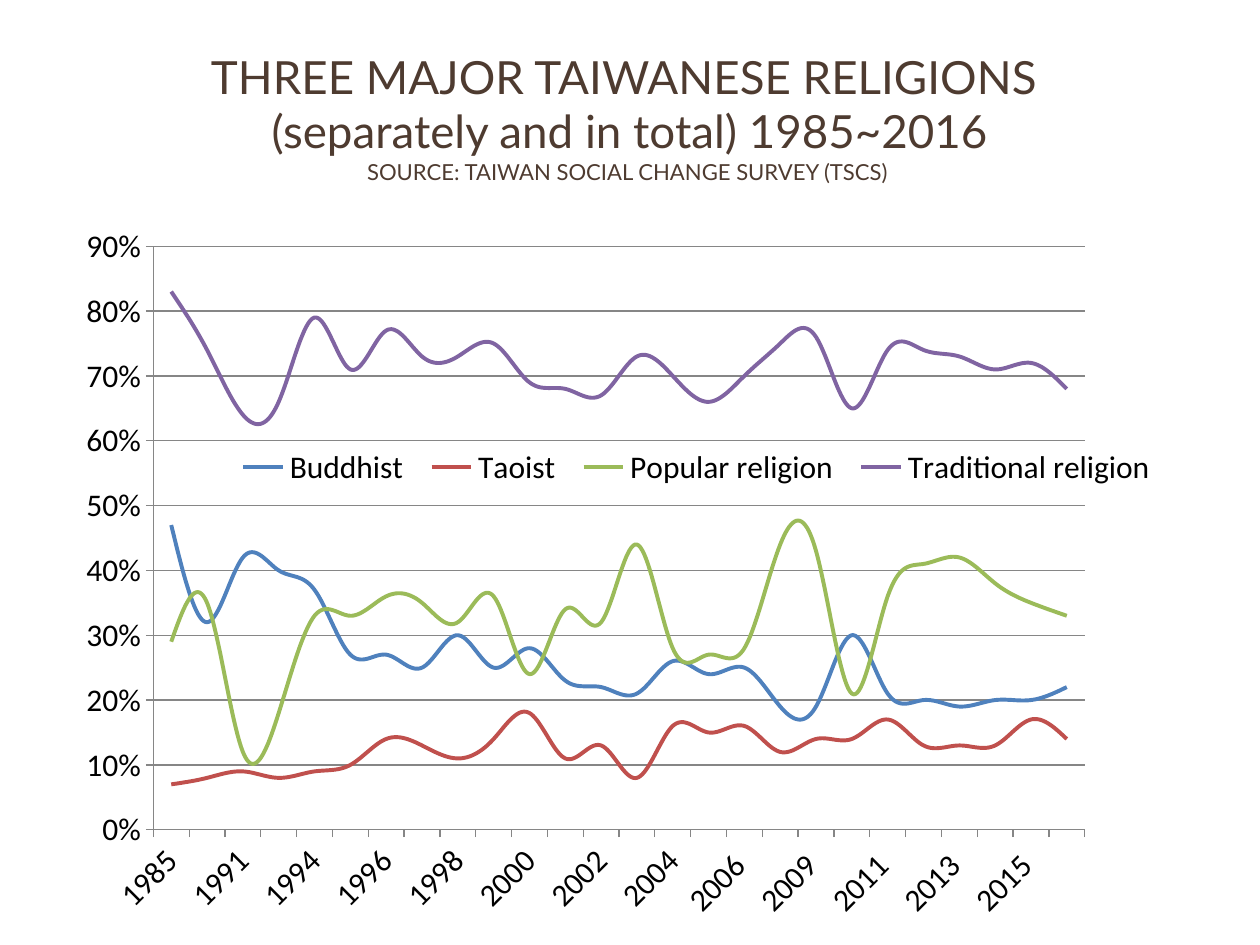
import pptx
import pptx.chart.data
import pptx.dml.color
import pptx.enum.chart
import pptx.enum.text
import pptx.oxml
import pptx.oxml.ns
import pptx.util
from pptx.util import Cm, Pt

COLOURS = {
    "title": "4E3B30", "text": "000000", "axis": "868686",
    "Buddhist": "4F81BD", "Taoist": "C0504D",
    "Popular religion": "9BBB59", "Traditional religion": "8064A2",
}
TITLE_LINES = [
    ("THREE MAJOR TAIWANESE RELIGIONS ", 26.1),
    ("(separately and in total) 1985~2016", 26.1),
    ("SOURCE: TAIWAN SOCIAL CHANGE SURVEY (TSCS) ", 12.6),
]
YEARS = [1985, 1990, 1991, 1992, *range(1994, 2008), *range(2009, 2017)]
YEAR_LABELS = [f"{year} " if year > 2004 else str(year) for year in YEARS]
PERCENTAGES = {
    "Buddhist": [47, 32, 42, 40, 37, 27, 27, 25, 30, 25, 28, 23, 22,
                 21, 26, 24, 25, 19, 19, 30, 21, 20, 19, 20, 20, 22],
    "Taoist": [7, 8, 9, 8, 9, 10, 14, 13, 11, 14, 18, 11, 13,
               8, 16, 15, 16, 12, 14, 14, 17, 13, 13, 13, 17, 14],
    "Popular religion": [29, 35, 12, 18, 33, 33, 36, 35, 32, 36, 24, 34, 32,
                         44, 28, 27, 28, 44, 43, 21, 36, 41, 42, 38, 35, 33],
    "Traditional religion": [83, 74, 64, 66, 79, 71, 77, 73, 73, 75, 69, 68, 67,
                             73, 70, 66, 70, 75, 76, 65, 74, 74, 73, 71, 72, 68],
}


def colour(name):
    """Return the named colour as an RGB value."""
    return pptx.dml.color.RGBColor.from_string(COLOURS[name])


def set_format(target, values):
    """Set each attribute of the target from a dict."""
    for name, value in values.items():
        setattr(target, name, value)


def set_line(line, name, width):
    """Give a line its colour and width in points."""
    line.color.rgb = colour(name)
    line.width = Pt(width)


def chart_element(xml):
    """Build an element from XML that uses the chart prefix."""
    namespace = pptx.oxml.ns.nsdecls("c")
    return pptx.oxml.parse_xml(xml.replace(">", f" {namespace}>", 1))


def set_layout(parent, index, box, target=""):
    """Place a chart part at fractions of the chart area."""
    for old_layout in parent.findall(pptx.oxml.ns.qn("c:layout")):
        parent.remove(old_layout)
    modes = "".join(f'<c:{side}Mode val="edge"/>' for side in "xy")
    sizes = "".join(f'<c:{side} val="{value}"/>' for side, value in zip("xywh", box))
    parent.insert(index, chart_element(
        f"<c:layout><c:manualLayout>{target}{modes}{sizes}</c:manualLayout></c:layout>"))


def add_title(slide, left, top, width, height):
    """Add the centred heading with its source line."""
    frame = slide.shapes.add_textbox(left, top, width, height).text_frame
    set_format(frame, {"word_wrap": True,
                       "vertical_anchor": pptx.enum.text.MSO_ANCHOR.MIDDLE})
    paragraph = frame.paragraphs[0]
    paragraph.alignment = pptx.enum.text.PP_ALIGN.CENTER
    for index, (text, size) in enumerate(TITLE_LINES):
        if index:
            paragraph.add_line_break()
        run = paragraph.add_run()
        run.text = text
        set_format(run.font, {"name": "Lato", "size": Pt(size)})
        run.font.color.rgb = colour("title")


def style_axes(chart):
    """Format both axes and show every second year at a slant."""
    outside = pptx.enum.chart.XL_TICK_MARK.OUTSIDE
    for axis in (chart.category_axis, chart.value_axis):
        set_format(axis, {"major_tick_mark": outside,
                          "minor_tick_mark": pptx.enum.chart.XL_TICK_MARK.NONE})
        set_line(axis.format.line, "axis", 0.75)
        axis.tick_labels.font.size = Pt(18)
    set_format(chart.value_axis, {"minimum_scale": 0, "maximum_scale": 0.9,
                                  "major_unit": 0.1, "has_major_gridlines": True})
    set_line(chart.value_axis.major_gridlines.format.line, "axis", 0.75)
    set_format(chart.value_axis.tick_labels,
               {"number_format": "0%", "number_format_is_linked": False})
    category = chart.category_axis._element
    category.find(".//" + pptx.oxml.ns.qn("a:bodyPr")).set("rot", "-2700000")
    category.find(pptx.oxml.ns.qn("c:noMultiLvlLbl")).addprevious(
        chart_element('<c:tickLblSkip val="2"></c:tickLblSkip>'))


def add_religion_chart(slide, left, top, width, height):
    """Add the line chart with one smooth line per religion."""
    data = pptx.chart.data.CategoryChartData(number_format="0%")
    data.categories = YEAR_LABELS
    for name, values in PERCENTAGES.items():
        data.add_series(name, [value / 100 for value in values])
    chart = slide.shapes.add_chart(
        pptx.enum.chart.XL_CHART_TYPE.LINE, left, top, width, height, data).chart
    set_format(chart, {"has_title": False, "has_legend": True})
    set_format(chart.font, {"name": "Calibri", "size": Pt(18)})
    chart.font.color.rgb = colour("text")
    chart.plots[0].vary_by_categories = False
    for series in chart.plots[0].series:
        series.smooth = True
        series.marker.style = pptx.enum.chart.XL_MARKER_STYLE.NONE
        set_line(series.format.line, series.name, 2.25)
    style_axes(chart)
    set_format(chart.legend, {"position": pptx.enum.chart.XL_LEGEND_POSITION.RIGHT,
                              "include_in_layout": False})
    set_layout(chart.legend._element, 1, (0.172, 0.326, 0.772, 0.06))
    plot_area = chart._chartSpace.find(".//" + pptx.oxml.ns.qn("c:plotArea"))
    set_layout(plot_area, 0, (0.113, 0.045, 0.763, 0.821),
               '<c:layoutTarget val="inner"/>')


def main():
    """Build the slide and save it."""
    presentation = pptx.Presentation()
    set_format(presentation, {"slide_width": Cm(25.4), "slide_height": Cm(19.05)})
    slide = presentation.slides.add_slide(presentation.slide_layouts[6])
    add_title(slide, Cm(1.27), Cm(0.76), Cm(22.86), Cm(3.18))
    add_religion_chart(slide, Cm(0.31), Cm(4.32), Cm(24.61), Cm(14.33))
    presentation.save("out.pptx")


if __name__ == "__main__":
    main()
